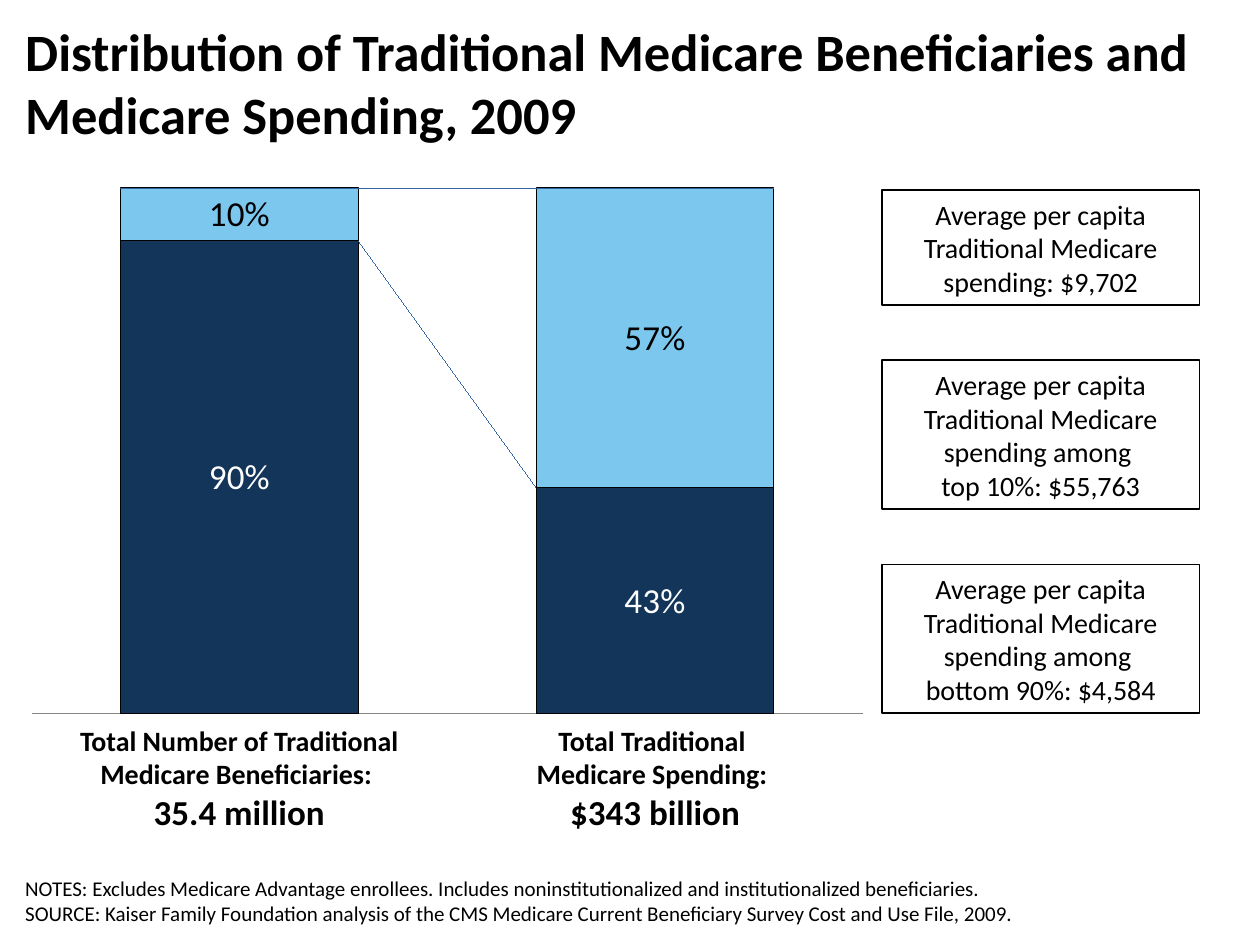
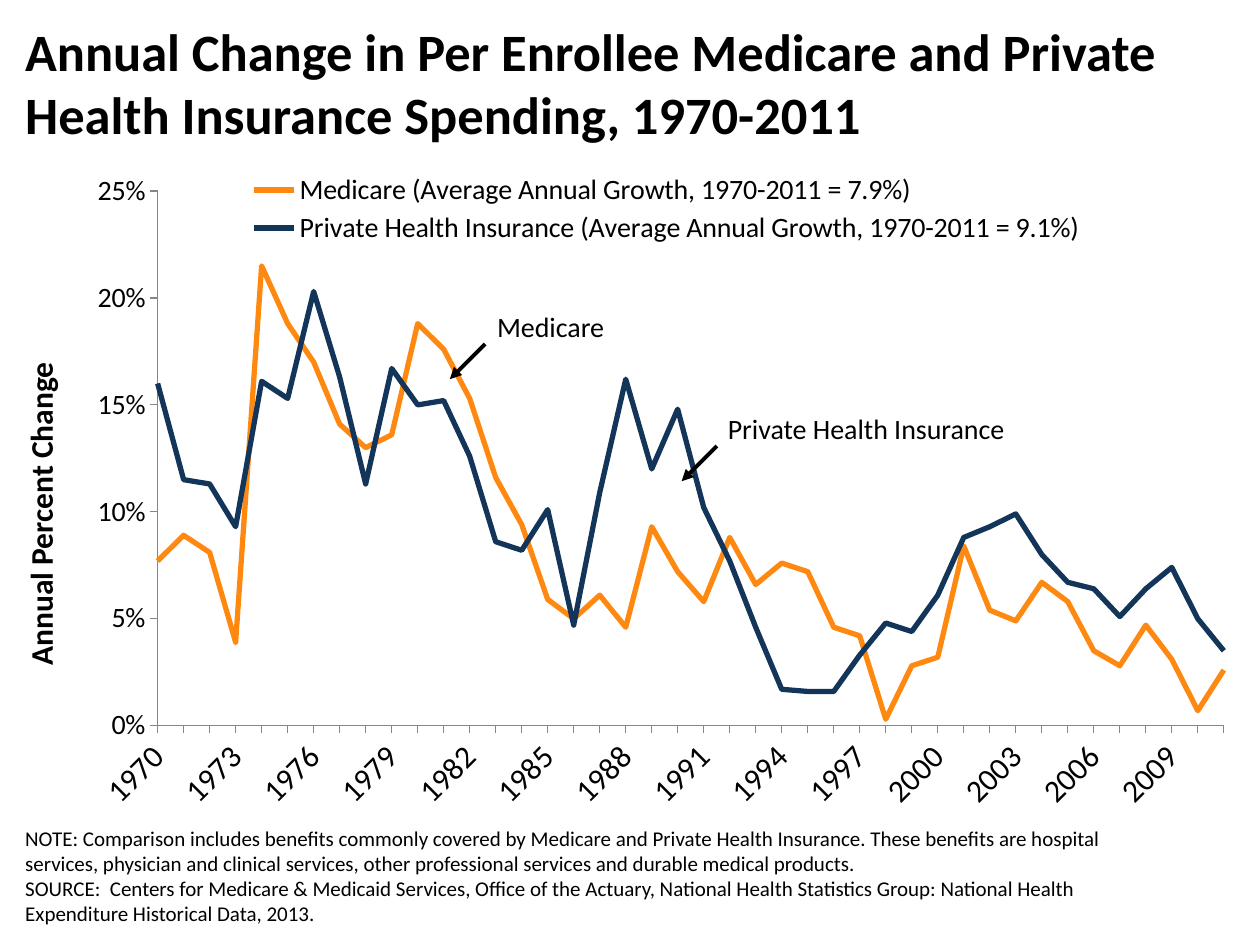
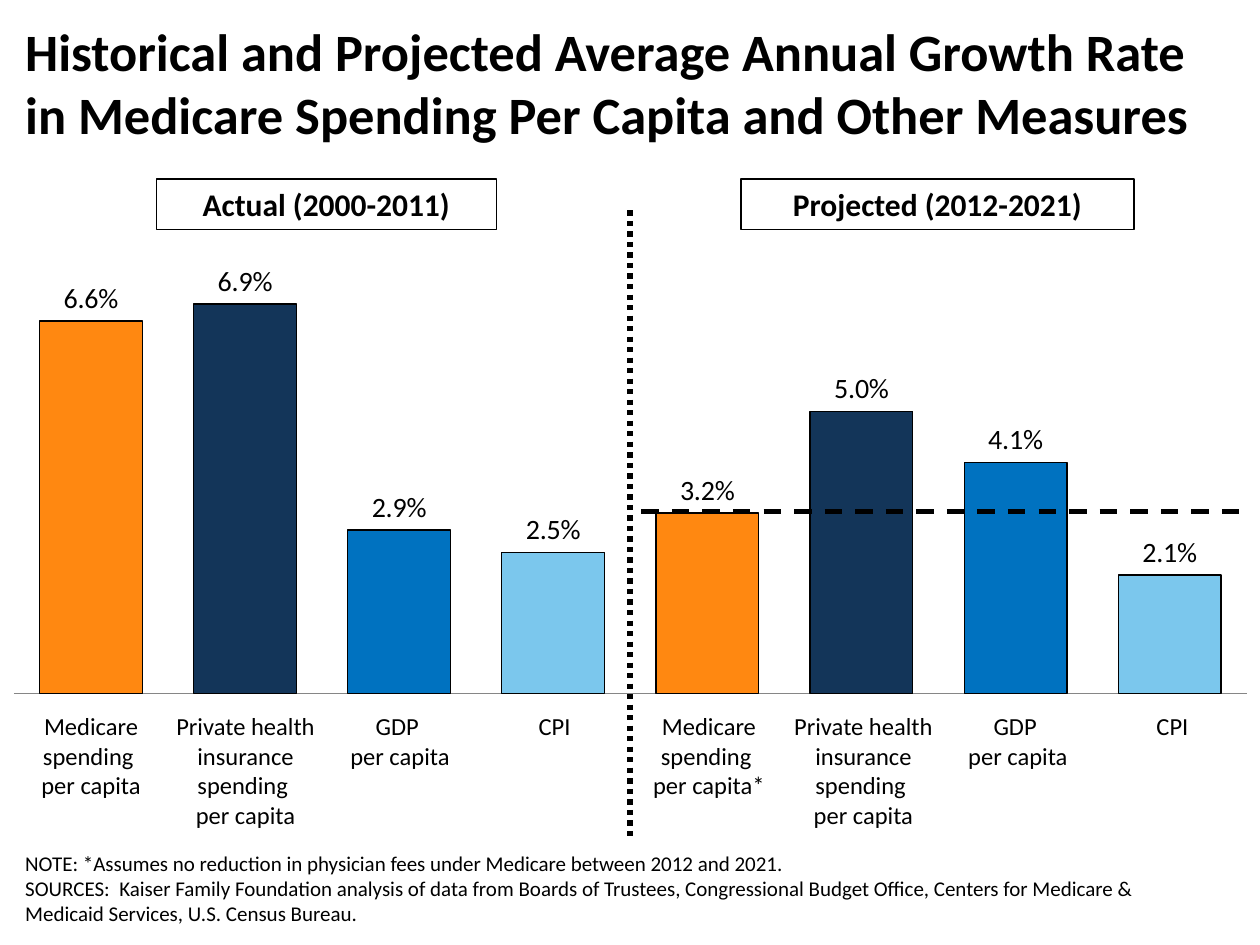
import copy
import dataclasses
import pptx
import pptx.chart.data
import pptx.dml.color
import pptx.enum.chart
import pptx.enum.dml
import pptx.enum.shapes
import pptx.enum.text
import pptx.oxml
import pptx.oxml.ns
import pptx.util

Pt = pptx.util.Pt
qn = pptx.oxml.ns.qn
Kind = pptx.enum.chart.XL_CHART_TYPE
Spot = pptx.enum.chart.XL_LABEL_POSITION
Tick = pptx.enum.chart.XL_TICK_MARK
Dash = pptx.enum.dml.MSO_LINE
Align = pptx.enum.text.PP_ALIGN
Anchor = pptx.enum.text.MSO_ANCHOR

COLS, ROWS = 100, 75
CELL = pptx.util.Inches(0.1)


@dataclasses.dataclass(frozen=True)
class Theme:
    font: str = "Calibri"
    ink: str = "000000"
    paper: str = "FFFFFF"
    axis: str = "868686"
    navy: str = "133559"
    sky: str = "7BC7ED"
    blue: str = "0072C0"
    orange: str = "FF8811"
    title: int = 30
    big: int = 20
    head: int = 18
    text: int = 16
    small: int = 14
    note: int = 12
    hair: float = 0.75


@dataclasses.dataclass(frozen=True)
class Box:
    x: float
    y: float
    w: float
    h: float

    def emu(self):
        return [round(v * CELL) for v in (self.x, self.y, self.w, self.h)]

    def sub(self, x, y, w, h):
        return Box(self.x + x, self.y + y, w, h)


LOOK = Theme()
TITLE = Box(1, 1, 98, 10)
NOTES = Box(1, 68, 91, 6)


def rgb(code):
    return pptx.dml.color.RGBColor.from_string(code)


def node(tag, inner="", **attrs):
    names = pptx.oxml.ns.nsdecls("a", "c")
    pairs = " ".join(f'{key}="{val}"' for key, val in attrs.items())
    return pptx.oxml.parse_xml(f"<{tag} {names} {pairs}>{inner}</{tag}>")


def style(font, size, color=LOOK.ink, bold=False):
    font.name, font.size, font.bold = LOOK.font, Pt(size), bold
    font.color.rgb = rgb(color)


def write(frame, lines, size=LOOK.text, bold=False, align=Align.CENTER,
          anchor=Anchor.TOP, plain=False):
    frame.word_wrap = True
    frame.vertical_anchor = anchor
    for i, line in enumerate(lines):
        words, points = line if isinstance(line, tuple) else (line, size)
        para = frame.paragraphs[0] if i == 0 else frame.add_paragraph()
        para.text = words
        para.alignment = align
        para.space_before = Pt(0)
        if plain:
            props = para._p.get_or_add_pPr()
            props.set("marL", "0")
            props.set("indent", "0")
            props.append(node("a:buNone"))
        for run in para.runs:
            style(run.font, points, bold=bold)
        for gap in para._p.findall(qn("a:br")):
            gap.insert(0, copy.deepcopy(para.runs[0]._r.rPr))


def label(slide, box, lines, **form):
    shape = slide.shapes.add_textbox(*box.emu())
    write(shape.text_frame, lines, **form)
    return shape


def panel(slide, box, words, weight=1, **form):
    kind = pptx.enum.shapes.MSO_SHAPE.RECTANGLE
    shape = slide.shapes.add_shape(kind, *box.emu())
    shape.shadow.inherit = False
    shape.fill.background()
    shape.line.color.rgb = rgb(LOOK.ink)
    shape.line.width = Pt(weight)
    write(shape.text_frame, [words], anchor=Anchor.MIDDLE, **form)


def rule(slide, start, end, weight, dash=None, arrow=False):
    ends = [round(v * CELL) for v in (*start, *end)]
    kind = pptx.enum.shapes.MSO_CONNECTOR.STRAIGHT
    line = slide.shapes.add_connector(kind, *ends)
    line.line.color.rgb = rgb(LOOK.ink)
    line.line.width = Pt(weight)
    if dash:
        line.line.dash_style = dash
    if arrow:
        line.line._get_or_add_ln().append(node("a:tailEnd", type="triangle"))
    line._element.spPr.append(node("a:effectLst"))


def page(deck, title, notes):
    slide = deck.slides.add_slide(deck.slide_layouts[1])
    body = slide.placeholders[1]
    for shape, box in ((slide.shapes.title, TITLE), (body, NOTES)):
        shape.left, shape.top, shape.width, shape.height = box.emu()
        shape.text_frame.auto_size = pptx.enum.text.MSO_AUTO_SIZE.NONE
    write(slide.shapes.title.text_frame, [title], size=LOOK.title, bold=True, align=Align.LEFT)
    write(body.text_frame, notes, size=LOOK.note, align=Align.LEFT,
          anchor=Anchor.BOTTOM, plain=True)
    return slide


def layout(x, y, w, h, inner=False):
    parts = '<c:layoutTarget val="inner"/>' if inner else ""
    parts += '<c:xMode val="edge"/><c:yMode val="edge"/>'
    parts += "".join(f'<c:{key} val="{val}"/>' for key, val in zip("xywh", (x, y, w, h)))
    return node("c:layout", f"<c:manualLayout>{parts}</c:manualLayout>")


def graph(slide, box, kind, cats, rows, plot, top, form):
    data = pptx.chart.data.CategoryChartData(number_format=form)
    data.categories = cats
    for name, vals in rows:
        data.add_series(name, vals)
    chart = slide.shapes.add_chart(kind, *box.emu(), data).chart
    chart.has_title = chart.has_legend = False
    style(chart.font, LOOK.head)
    space = chart._chartSpace
    space.insert_element_before(
        node("c:spPr", "<a:noFill/><a:ln><a:noFill/></a:ln>"), "c:txPr", "c:externalData")
    area = space.find(".//" + qn("c:plotArea"))
    for old in area.findall(qn("c:layout")):
        area.remove(old)
    area.insert(0, layout(*plot, inner=True))
    chart.plots[0].vary_by_categories = False
    scale, base = chart.value_axis, chart.category_axis
    scale.minimum_scale, scale.maximum_scale = 0, top
    for axis in (scale, base):
        axis.has_major_gridlines = False
        axis.minor_tick_mark = Tick.NONE
        axis.format.line.color.rgb = rgb(LOOK.axis)
    scale.tick_labels.number_format = form
    scale.tick_labels.number_format_is_linked = False
    return chart


def bars(chart, gap, tints, inks, size, form, spot):
    chart.value_axis.visible = False
    chart.category_axis.major_tick_mark = Tick.NONE
    chart.category_axis.tick_label_position = pptx.enum.chart.XL_TICK_LABEL_POSITION.NONE
    chart.plots[0].gap_width = gap
    for row, tint, ink in zip(chart.plots[0].series, tints, inks):
        row.invert_if_negative = False
        paint(row, tint)
        marks = row.data_labels
        marks.show_value = True
        marks.number_format, marks.number_format_is_linked = form, False
        marks.position = spot
        style(marks.font, size, ink)


def paint(part, tint):
    part.format.fill.solid()
    part.format.fill.fore_color.rgb = rgb(tint)
    part.format.line.color.rgb = rgb(LOOK.ink)
    part.format.line.width = Pt(LOOK.hair)


def shares(slide, box):
    rows = [("Series 1", (0.9, 0.43)), ("Series 2", (0.1, 0.57))]
    chart = graph(slide, box, Kind.COLUMN_STACKED_100, ["1", "2"], rows,
                  (0.022, 0.049, 0.956, 0.917), 1, "0%")
    bars(chart, 75, (LOOK.navy, LOOK.sky), (LOOK.paper, LOOK.ink), LOOK.big, "0%", Spot.CENTER)
    chart.plots[0].overlap = 100
    chart.plots[0]._element.insert_element_before(node("c:serLines"), "c:axId")


def totals(slide, box):
    texts = [
        ["Total Number of Traditional Medicare Beneficiaries: ", ("35.4 million", LOOK.big)],
        ["Total Traditional ", "Medicare Spending: ", ("$343 billion", LOOK.big)],
    ]
    for i, lines in enumerate(texts):
        label(slide, box.sub(i * box.w / 2, 0, box.w / 2, box.h), lines, bold=True)


def facts(slide, box):
    lead = "Average per capita Traditional Medicare spending"
    texts = [(f"{lead}: $9,702", 3), (f"{lead} among \ntop 10%: $55,763", 4),
             (f"{lead} among \nbottom 90%: $4,584", 4)]
    highs = [2.7 * count + 1 for _, count in texts]
    gap = (box.h - sum(highs)) / (len(texts) - 1)
    top = 0
    for (words, _), high in zip(texts, highs):
        panel(slide, box.sub(0, top, box.w, high), words)
        top += high + gap


def spread(deck):
    slide = page(deck, "Distribution of Traditional Medicare Beneficiaries and Medicare Spending, 2009", [
        "NOTES: Excludes Medicare Advantage enrollees. Includes noninstitutionalized and institutionalized beneficiaries.",
        "SOURCE: Kaiser Family Foundation analysis of the CMS Medicare Current Beneficiary Survey Cost and Use File, 2009.",
    ])
    shares(slide, Box(1, 12.7, 69, 45.5))
    totals(slide, Box(2.5, 56.9, 66, 9.7))
    facts(slide, Box(70, 15.1, 25.2, 41.5))


def trends(slide, box):
    care = (
        0.077, 0.089, 0.081, 0.039, 0.215, 0.188, 0.17, 0.141, 0.13, 0.136, 0.188,
        0.176, 0.153, 0.116, 0.094, 0.059, 0.05, 0.061, 0.046, 0.093, 0.072, 0.058,
        0.088, 0.066, 0.076, 0.072, 0.046, 0.042, 0.003, 0.028, 0.032, 0.084, 0.054,
        0.049, 0.067, 0.058, 0.035, 0.028, 0.047, 0.031, 0.007, 0.026)
    private = (
        0.16, 0.115, 0.113, 0.093, 0.161, 0.153, 0.203, 0.163, 0.113, 0.167, 0.15,
        0.152, 0.126, 0.086, 0.082, 0.101, 0.047, 0.109, 0.162, 0.12, 0.148, 0.102,
        0.077, 0.046, 0.017, 0.016, 0.016, 0.033, 0.048, 0.044, 0.061, 0.088, 0.093,
        0.099, 0.08, 0.067, 0.064, 0.051, 0.064, 0.074, 0.05, 0.035)
    rows = [("Medicare (Average Annual Growth, 1970-2011 = 7.9%)", care),
            ("Private Health Insurance (Average Annual Growth, 1970-2011 = 9.1%)", private)]
    years = [str(year) for year in range(1970, 2012)]
    chart = graph(slide, box, Kind.LINE, years, rows, (0.071, 0.12, 0.909, 0.742), 0.25, "0%")
    for row, tint in zip(chart.plots[0].series, (LOOK.orange, LOOK.navy)):
        row.smooth = False
        row.format.line.color.rgb = rgb(tint)
        row.format.line.width = Pt(3)
    scale, base = chart.value_axis, chart.category_axis
    scale.major_unit = 0.05
    scale.major_tick_mark = base.major_tick_mark = Tick.OUTSIDE
    style(scale.tick_labels.font, LOOK.text)
    style(base.tick_labels.font, LOOK.head)
    base._element.find(qn("c:txPr")).find(qn("a:bodyPr")).set("rot", "-2700000")
    for tag, step in (("c:tickLblSkip", 3), ("c:tickMarkSkip", 1)):
        base._element.insert_element_before(node(tag, val=step), "c:noMultiLvlLbl")
    for old in scale._element.findall(qn("c:crossBetween")):
        scale._element.remove(old)
    scale._element.insert_element_before(node("c:crossBetween", val="midCat"), "c:majorUnit")
    chart.has_legend = True
    key = chart.legend
    key.position = pptx.enum.chart.XL_LEGEND_POSITION.TOP
    key.include_in_layout = False
    style(key.font, LOOK.text)
    key._element.insert(1, layout(0.14, 0.09, 0.73, 0.11))


def callout(slide, box, words):
    label(slide, box, [words])
    x, y = box.x + 4.4, box.y + 3.2
    rule(slide, (x, y), (x - 2.8, y + 2.8), 2.25, arrow=True)


def growth(deck):
    slide = page(deck, "Annual Change in Per Enrollee Medicare and Private Health Insurance Spending, 1970-2011", [
        "NOTE: Comparison includes benefits commonly covered by Medicare and Private Health Insurance. These benefits are hospital services, physician and clinical services, other professional services and durable medical products.",
        "SOURCE:  Centers for Medicare & Medicaid Services, Office of the Actuary, National Health Statistics Group: National Health Expenditure Historical Data, 2013.",
    ])
    trends(slide, Box(5.9, 8.3, 93.1, 57.2))
    side = label(slide, Box(1.2, 25, 5, 31.6), ["Annual Percent Change"], size=LOOK.head, bold=True)
    side.text_frame._txBody.bodyPr.set("vert", "vert270")
    callout(slide, Box(34.1, 24.1, 19.2, 3.7), "Medicare")
    callout(slide, Box(52.5, 32.2, 32.5, 3.7), "Private Health Insurance")


def rates(slide, box):
    vals = (0.066, 0.069, 0.029, 0.025, 0.032, 0.05, 0.041, 0.021)
    cats = [str(i + 1) for i in range(len(vals))]
    chart = graph(slide, box, Kind.COLUMN_CLUSTERED, cats, [("Series 1", vals)],
                  (0.001, 0.131, 0.999, 0.652), 0.08, "0.0%")
    bars(chart, 50, [LOOK.orange], [LOOK.ink], LOOK.text, "0.0%", Spot.OUTSIDE_END)
    tints = (LOOK.orange, LOOK.navy, LOOK.blue, LOOK.sky)
    for i in range(len(vals)):
        if i % len(tints):
            paint(chart.plots[0].series[0].points[i], tints[i % len(tints)])


def names(slide, box):
    def group(mark=""):
        return [f"Medicare spending \nper capita{mark}",
                "Private health insurance spending \nper capita", "GDP \nper capita", "CPI"]

    texts = group() + group("*")
    table = slide.shapes.add_table(1, len(texts), *box.emu()).table
    table.first_row = table.horz_banding = False
    plain = "{2D5ABB26-0587-4C30-8999-92F81FD0307C}"
    table._tbl.find(".//" + qn("a:tableStyleId")).text = plain
    for cell, words in zip(table.iter_cells(), texts):
        cell.margin_left = cell.margin_right = cell.margin_top = cell.margin_bottom = 0
        cell.fill.background()
        write(cell.text_frame, [words], size=LOOK.small)


def outlook(deck):
    slide = page(deck, "Historical and Projected Average Annual Growth Rate in Medicare Spending Per Capita and Other Measures", [
        "NOTE: *Assumes no reduction in physician fees under Medicare between 2012 and 2021.",
        "SOURCES:  Kaiser Family Foundation analysis of data from Boards of Trustees, Congressional Budget Office, Centers for Medicare & Medicaid Services, U.S. Census Bureau.",
    ])
    rates(slide, Box(1, 12, 98, 55))
    names(slide, Box(1.1, 56.5, 98.1, 9.3))
    rule(slide, (50.9, 40.6), (98.9, 40.6), 2.5, dash=Dash.DASH)
    rule(slide, (COLS / 2, 16.7), (COLS / 2, 66.4), 3, dash=Dash.ROUND_DOT)
    for x, wide, words in ((12.4, 27, "Actual (2000-2011)"), (58.8, 31.2, "Projected (2012-2021)")):
        panel(slide, Box(x, 14.2, wide, 4), words, weight=LOOK.hair, size=LOOK.head, bold=True)


def main():
    deck = pptx.Presentation()
    deck.slide_width, deck.slide_height = COLS * CELL, ROWS * CELL
    for build in (spread, growth, outlook):
        build(deck)
    deck.save("out.pptx")


if __name__ == "__main__":
    main()
